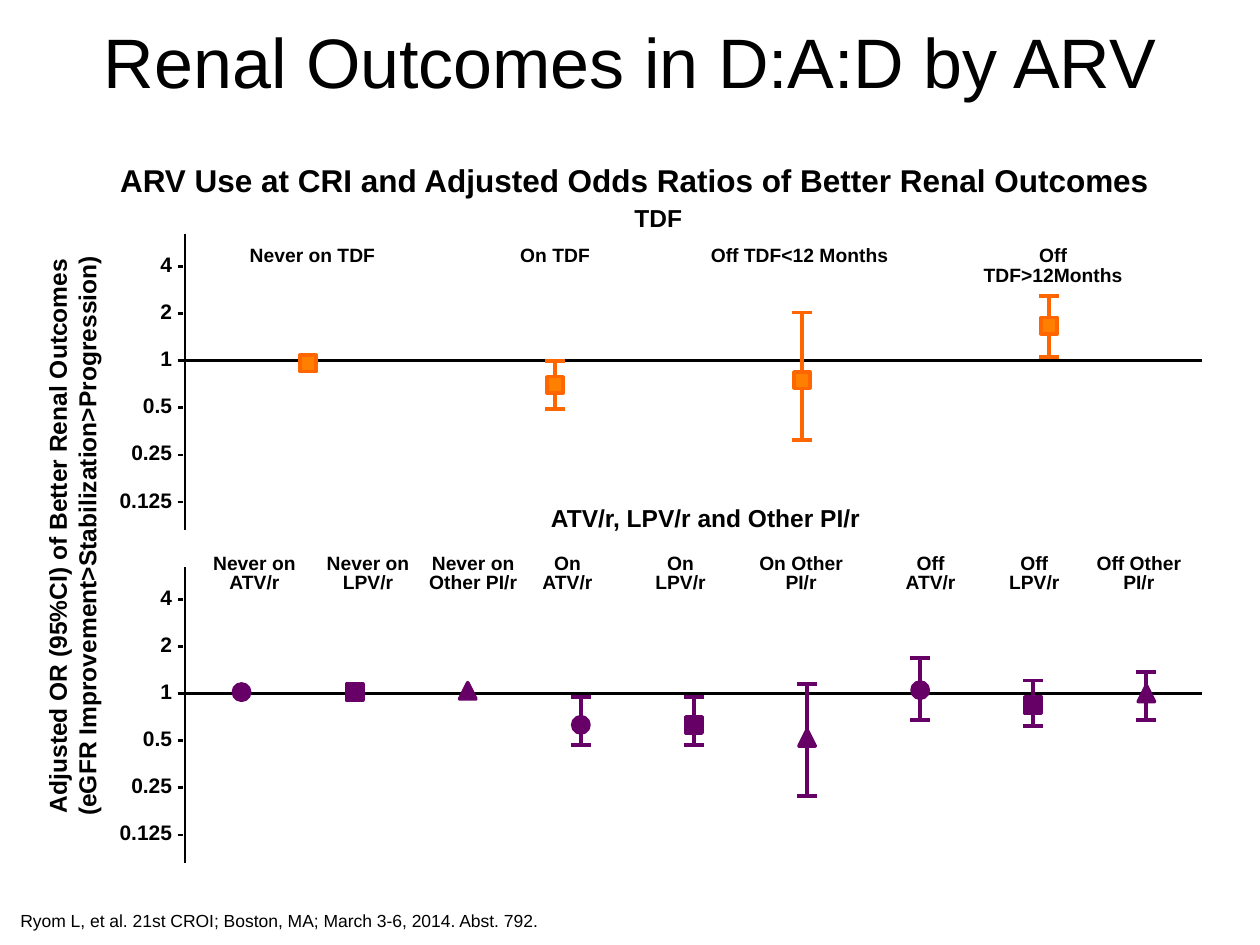
from math import log2

from lxml.etree import SubElement
from pptx import Presentation
from pptx.dml.color import RGBColor
from pptx.enum.shapes import MSO_CONNECTOR as Conn, MSO_SHAPE as Geo
from pptx.enum.text import MSO_ANCHOR as Anchor, MSO_AUTO_SIZE as Fit, PP_ALIGN as Align
from pptx.oxml.ns import qn
from pptx.util import Cm, Pt

BLACK = RGBColor(0, 0, 0)
ORANGE = RGBColor(0xFF, 0x80, 0x00)
AMBER = RGBColor(0xFF, 0x66, 0x00)
PLUM = RGBColor(0x66, 0x00, 0x66)

TICKS = ("4", "2", "1", "0.5", "0.25", "0.125")
STEP = 0.95   # height of one doubling
FIRST = 0.65  # axis top to first tick
AXIS = 3.73
HEAD = (0.33, 0.18)
CIRCLE, BOX, PEAK = Geo.OVAL, Geo.RECTANGLE, Geo.ISOSCELES_TRIANGLE

# label, label centre, label width, marker, odds ratio, (low, high)
TDF = (
    ("Never on TDF", 6.3, 2.54, BOX, 0.96, None),
    ("On TDF", 11.19, 1.65, BOX, 0.7, (0.49, 0.99)),
    ("Off TDF<12 Months", 16.12, 3.58, BOX, 0.75, (0.31, 2.03)),
    ("Off TDF>12Months", 21.23, 3.45, BOX, 1.67, (1.06, 2.58)),
)
PI = (
    ("Never on ATV/r", 5.13, 1.98, CIRCLE, 1.02, None),
    ("Never on LPV/r", 7.42, 1.98, BOX, 1.02, None),
    ("Never on Other PI/r", 9.54, 2.46, PEAK, 1.04, None),
    ("On ATV/r", 11.44, 1.3, CIRCLE, 0.63, (0.47, 0.95)),
    ("On LPV/r", 13.72, 1.32, BOX, 0.63, (0.47, 0.95)),
    ("On Other PI/r", 16.15, 1.78, PEAK, 0.52, (0.22, 1.15)),
    ("Off ATV/r", 18.76, 1.3, CIRCLE, 1.05, (0.68, 1.69)),
    ("Off LPV/r", 20.85, 1.32, BOX, 0.84, (0.62, 1.21)),
    ("Off Other PI/r", 22.96, 1.78, PEAK, 1, (0.68, 1.38)),
)


class Sheet:
    font = "Arial"

    def __init__(self, deck):
        self.slide = deck.slides.add_slide(deck.slide_layouts[5])
        self.shapes = self.slide.shapes

    def style(self, para, size, bold, align):
        para.font.name, para.font.size, para.font.bold = self.font, Pt(size), bold
        para.font.color.rgb = BLACK
        para.alignment = align

    def title(self, text, x, y, w, h):
        box = self.shapes.title
        box.left, box.top, box.width, box.height = Cm(x), Cm(y), Cm(w), Cm(h)
        frame = box.text_frame
        frame.text = text
        frame.auto_size = Fit.NONE
        frame.vertical_anchor = Anchor.MIDDLE
        self.style(frame.paragraphs[0], 40, False, Align.CENTER)

    def text(self, text, x, y, w, h, size, bold=True, align=Align.CENTER,
             inset=(0, 0), space=1.0, anchor=Anchor.TOP):
        box = self.shapes.add_textbox(Cm(x), Cm(y), Cm(w), Cm(h))
        frame = box.text_frame
        frame.word_wrap = True
        frame.vertical_anchor = anchor
        frame.margin_left = frame.margin_right = Cm(inset[0])
        frame.margin_top = frame.margin_bottom = Cm(inset[1])
        para = frame.paragraphs[0]
        para.text = text
        para.line_spacing = space
        self.style(para, size, bold, align)
        return box

    def heading(self, text, x, y, w, size):
        self.text(text, x, y, w, 0.86, size, inset=HEAD, space=0.9)

    def line(self, x1, y1, x2, y2, color=BLACK, width=1.5):
        rule = self.shapes.add_connector(Conn.STRAIGHT, Cm(x1), Cm(y1), Cm(x2), Cm(y2))
        rule.line.color.rgb = color
        rule.line.width = Pt(width)
        SubElement(rule._element.spPr, qn("a:effectLst"))

    def marker(self, kind, x, y, fill, edge, size=0.33):
        mark = self.shapes.add_shape(kind, Cm(x - size / 2), Cm(y - size / 2),
                                     Cm(size), Cm(size))
        mark.shadow.inherit = False
        mark.fill.solid()
        mark.fill.fore_color.rgb = fill
        mark.line.color.rgb = edge
        mark.line.width = Pt(2)

    def whisker(self, x, low, high, color, cap=0.2):
        self.line(x, high, x, low, color, 2.25)
        for y in (low, high):
            self.line(x - cap, y, x + cap, y, color, 2.25)

    def axis(self, top):
        self.line(AXIS, top, AXIS, top + 5.97)
        for i, tick in enumerate(TICKS):
            y = top + FIRST + i * STEP
            self.line(AXIS - 0.15, y, AXIS - 0.05, y)
            self.text(tick, AXIS - 1.61, y - 0.43, 1.6, 0.77, 12,
                      align=Align.RIGHT, inset=(0.25, 0.13))
            if tick == "1":
                self.line(AXIS - 0.05, y, 24.23, y)

    def panel(self, rows, top, names, start, gap, fill, edge):
        """Draw a log2 axis with one labelled odds ratio per row."""
        def height(ratio):
            return top + FIRST + (2 - log2(ratio)) * STEP

        self.axis(top)
        for i, (name, mid, wide, kind, ratio, span) in enumerate(rows):
            x = start + i * gap
            self.text(name, mid - wide / 2, names, wide, 0.84, 11, space=0.85)
            if span:
                self.whisker(x, height(span[0]), height(span[1]), edge)
            self.marker(kind, x, height(ratio), fill, edge)


def main():
    deck = Presentation()
    deck.slide_width, deck.slide_height = Cm(25.4), Cm(19.05)
    sheet = Sheet(deck)
    sheet.title("Renal Outcomes in D:A:D by ARV", 1.27, 0, 22.86, 2.44)
    sheet.heading("ARV Use at CRI and Adjusted Odds Ratios of Better Renal Outcomes",
                  1.16, 3.15, 23.27, 18)
    sheet.heading("TDF", 10.73, 3.99, 5.08, 14)
    sheet.panel(TDF, 4.72, 4.98, 6.21, 4.98, ORANGE, AMBER)
    sheet.heading("ATV/r, LPV/r and Other PI/r", 8.6, 10.03, 11.25, 14)
    sheet.panel(PI, 11.43, 11.18, 4.87, 2.28, PLUM, PLUM)
    side = sheet.text("Adjusted OR (95%CI) of Better Renal Outcomes\n"
                      "(eGFR Improvement>Stabilization>Progression)",
                      -4.47, 10.08, 11.84, 1.45, 14, inset=(0.25, 0.13))
    side.rotation = 270
    sheet.text("Ryom L, et al. 21st CROI; Boston, MA; March 3-6, 2014. Abst. 792.",
               0.41, 17.88, 23.67, 1.02, 10, bold=False, align=Align.LEFT,
               inset=(0, 0.13), anchor=Anchor.BOTTOM)
    deck.save("out.pptx")


if __name__ == "__main__":
    main()
